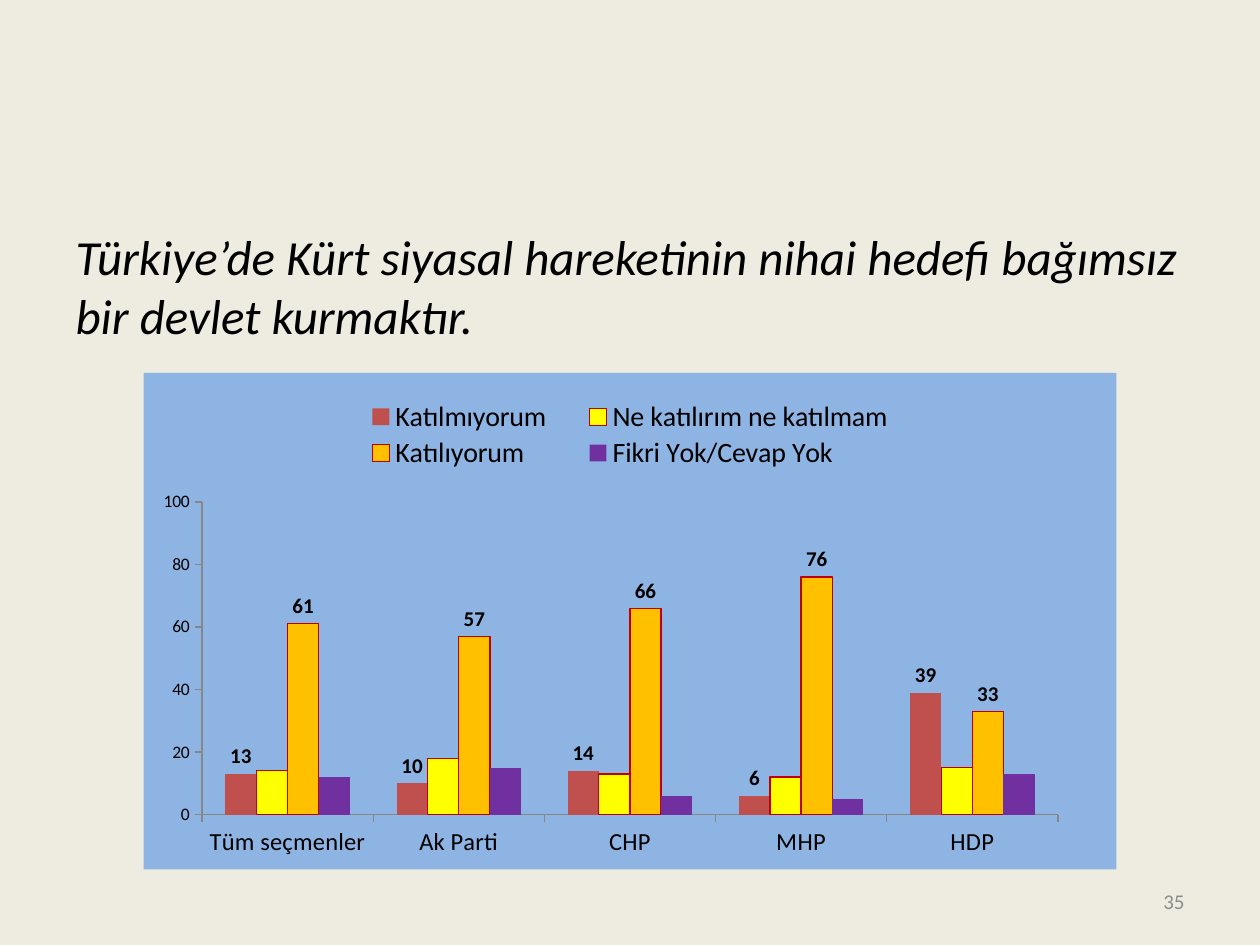
from lxml import etree
from pptx import Presentation
from pptx.chart.data import CategoryChartData
from pptx.dml.color import RGBColor
from pptx.enum import chart as ch, text
from pptx.oxml import parse_xml
from pptx.oxml.ns import nsdecls, qn
from pptx.util import Inches, Pt

COLORS = {
    "background": "EEECE1",
    "panel": "8EB4E3",
    "text": "000000",
    "number": "8C8C8C",
    "axis": "868686",
    "outline": "C00000",
}
FONT = "Calibri"
STATEMENT = "Türkiye’de Kürt siyasal hareketinin nihai hedefi bağımsız bir devlet kurmaktır."
VOTERS = ["Tüm seçmenler", "Ak Parti", "CHP", "MHP", "HDP"]
# answer, shares, fill, outlined, labelled
ANSWERS = [
    ("Katılmıyorum", (13, 10, 14, 6, 39), "C0504D", False, True),
    ("Ne katılırım ne katılmam", (14, 18, 13, 12, 15), "FFFF00", True, False),
    ("Katılıyorum", (61, 57, 66, 76, 33), "FFC000", True, True),
    ("Fikri Yok/Cevap Yok", (12, 15, 6, 5, 13), "7030A0", False, False),
]


def rgb(name):
    return RGBColor.from_string(COLORS[name])


def style_font(font, size, color="text", bold=False, italic=False):
    font.name, font.size = FONT, Pt(size)
    font.bold, font.italic = bold, italic
    font.color.rgb = rgb(color)


def add_statement(slide):
    body = slide.placeholders[1]
    body.left, body.top = Inches(0.5), Inches(1.75)
    body.width, body.height = Inches(9), Inches(4.95)
    body.text_frame.text = STATEMENT
    paragraph = body.text_frame.paragraphs[0]
    style_font(paragraph.runs[0].font, 28, italic=True)
    properties = paragraph._p.get_or_add_pPr()
    properties.set("marL", "0")
    properties.set("indent", "0")
    etree.SubElement(properties, qn("a:buNone"))


def add_page_number(slide, number):
    box = slide.shapes.add_textbox(Inches(7.17), Inches(6.95), Inches(2.33), Inches(0.4))
    frame = box.text_frame
    frame.word_wrap = True
    frame.vertical_anchor = text.MSO_ANCHOR.MIDDLE
    frame.text = number
    frame.paragraphs[0].alignment = text.PP_ALIGN.RIGHT
    style_font(frame.paragraphs[0].runs[0].font, 12, "number")


def set_layout(parent, position, x, y, w, h, inner=False):
    """Place a chart part by fractions of the chart's size."""
    for old in parent.findall(qn("c:layout")):
        parent.remove(old)
    target = '<c:layoutTarget val="inner"/>' if inner else ""
    parent.insert(position, parse_xml(
        f'<c:layout {nsdecls("c")}><c:manualLayout>{target}'
        '<c:xMode val="edge"/><c:yMode val="edge"/>'
        f'<c:x val="{x}"/><c:y val="{y}"/><c:w val="{w}"/><c:h val="{h}"/>'
        '</c:manualLayout></c:layout>'))


def fill_panel(chart):
    chart._chartSpace.find(qn("c:chart")).addnext(parse_xml(
        f'<c:spPr {nsdecls("c", "a")}><a:solidFill><a:srgbClr val="{COLORS["panel"]}"/>'
        '</a:solidFill><a:ln><a:noFill/></a:ln></c:spPr>'))


def style_axis(axis, size):
    axis.has_major_gridlines = False
    axis.major_tick_mark = ch.XL_TICK_MARK.OUTSIDE
    axis.minor_tick_mark = ch.XL_TICK_MARK.NONE
    axis.format.line.color.rgb = rgb("axis")
    axis.format.line.width = Pt(0.75)
    style_font(axis.tick_labels.font, size)


def style_series(series, fill, outlined, labelled):
    series.invert_if_negative = False
    series.format.fill.solid()
    series.format.fill.fore_color.rgb = RGBColor.from_string(fill)
    if outlined:
        series.format.line.color.rgb = rgb("outline")
        series.format.line.width = Pt(0.75)
    if labelled:
        labels = series.data_labels
        labels.show_value = True
        labels.number_format, labels.number_format_is_linked = "0", False
        labels.position = ch.XL_LABEL_POSITION.OUTSIDE_END
        style_font(labels.font, 12, bold=True)


def add_answer_chart(slide):
    data = CategoryChartData()
    data.categories = VOTERS
    for answer, shares, *_ in ANSWERS:
        data.add_series(answer, shares)
    chart = slide.shapes.add_chart(
        ch.XL_CHART_TYPE.COLUMN_CLUSTERED,
        Inches(1.14), Inches(2.96), Inches(7.72), Inches(3.94), data).chart
    chart.has_title = False
    style_font(chart.font, 10)
    fill_panel(chart)

    plot = chart.plots[0]
    plot.gap_width, plot.overlap, plot.vary_by_categories = 150, 0, False
    for series, (_, _, *style) in zip(plot.series, ANSWERS):
        style_series(series, *style)

    style_axis(chart.category_axis, 14)
    shares_axis = chart.value_axis
    style_axis(shares_axis, 10)
    shares_axis.minimum_scale, shares_axis.maximum_scale = 0, 100
    shares_axis.major_unit = 20
    shares_axis.tick_labels.number_format = "0"
    shares_axis.tick_labels.number_format_is_linked = False

    chart.has_legend = True
    legend = chart.legend
    legend.position = ch.XL_LEGEND_POSITION.RIGHT
    legend.include_in_layout = False
    style_font(legend.font, 16)
    set_layout(legend._element, 1, 0.2, 0.05, 0.6, 0.15)
    plot_area = chart._chartSpace.find(qn("c:chart")).find(qn("c:plotArea"))
    set_layout(plot_area, 0, 0.06, 0.26, 0.88, 0.63, inner=True)


def main():
    deck = Presentation()
    deck.slide_width, deck.slide_height = Inches(10), Inches(7.5)
    slide = deck.slides.add_slide(deck.slide_layouts[1])
    slide.background.fill.solid()
    slide.background.fill.fore_color.rgb = rgb("background")
    title = slide.shapes.title._element
    title.getparent().remove(title)
    add_statement(slide)
    add_page_number(slide, "35")
    add_answer_chart(slide)
    deck.save("out.pptx")


if __name__ == "__main__":
    main()
